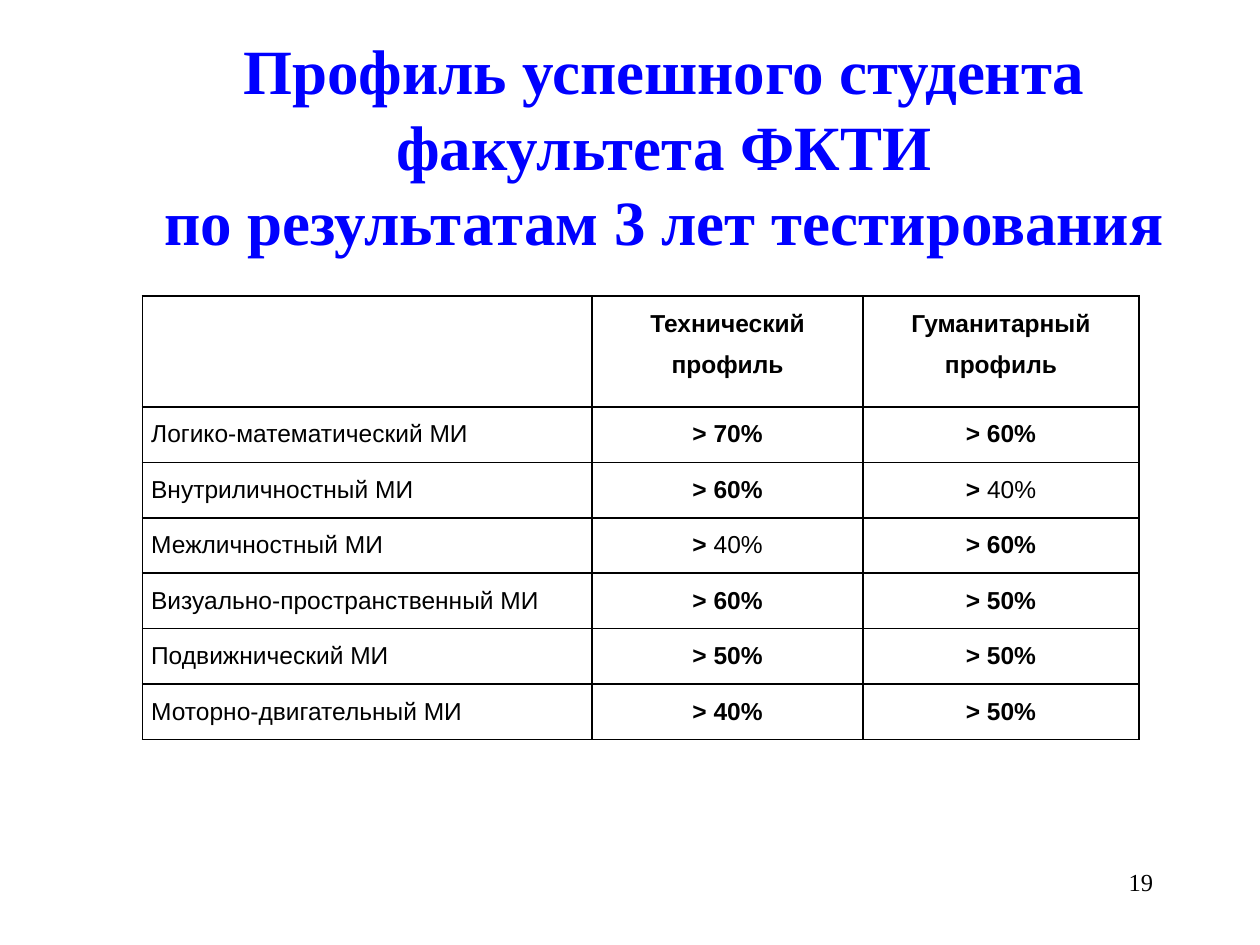
from lxml.etree import SubElement
from pptx import Presentation
from pptx.dml.color import RGBColor
from pptx.enum.text import MSO_ANCHOR, MSO_AUTO_SIZE, PP_ALIGN
from pptx.oxml.ns import qn
from pptx.util import Inches, Pt

COLORS = {"title": "0000FF", "text": "000000", "cell": "FFFFFF", "border": "000000"}
SERIF, SANS = "Times New Roman", "Arial"

TITLE = ["Профиль успешного студента факультета ФКТИ",
         "по результатам 3 лет тестирования"]
HEADER = ["", "Технический профиль", "Гуманитарный профиль"]
SCORES = [
    ("Логико-математический МИ", 70, 60),
    ("Внутриличностный МИ", 60, 40),
    ("Межличностный МИ", 40, 60),
    ("Визуально-пространственный МИ", 60, 50),
    ("Подвижнический МИ", 50, 50),
    ("Моторно-двигательный МИ", 40, 50),
]
LIGHT_CELLS = {(2, 2), (3, 1)}  # row, column of values in regular weight
COL_WIDTHS = [3.57, 2.15, 2.19]
ROW_HEIGHT = 0.44


def add_run(p, text, font, size, color="text", bold=False):
    r = p.add_run()
    r.text = text
    r.font.name, r.font.size, r.font.bold = font, Pt(size), bold
    r.font.color.rgb = RGBColor.from_string(COLORS[color])


def add_title(slide, left, top, width, height):
    s = slide.shapes.title
    s.left, s.top, s.width, s.height = map(Inches, (left, top, width, height))
    tf = s.text_frame
    tf.word_wrap = True
    tf.auto_size = MSO_AUTO_SIZE.NONE
    tf.vertical_anchor = MSO_ANCHOR.TOP
    for i, line in enumerate(TITLE):
        p = tf.add_paragraph() if i else tf.paragraphs[0]
        p.alignment = PP_ALIGN.CENTER
        add_run(p, line, SERIF, 36, "title", True)


def add_page_number(slide, left, top, width, height):
    box = slide.shapes.add_textbox(*map(Inches, (left, top, width, height)))
    tf = box.text_frame
    tf.word_wrap = True
    p = tf.paragraphs[0]
    p.alignment = PP_ALIGN.RIGHT
    add_run(p, "19", SERIF, 14)


def style_cell(cell):
    """Set margins, thin borders on all sides and a plain fill."""
    cell.margin_left = cell.margin_right = Inches(0.07)
    cell.margin_top = cell.margin_bottom = 0
    tcPr = cell._tc.get_or_add_tcPr()
    for side in ("a:lnL", "a:lnR", "a:lnT", "a:lnB"):
        ln = SubElement(tcPr, qn(side), w=str(Pt(1)))
        fill = SubElement(ln, qn("a:solidFill"))
        SubElement(fill, qn("a:srgbClr"), val=COLORS["border"])
    cell.fill.solid()
    cell.fill.fore_color.rgb = RGBColor.from_string(COLORS["cell"])


def cell_runs(row, col, value):
    """Return the (text, bold) runs of a cell."""
    if row == 0:
        return [(value, True)] if value else []
    if col == 0:
        return [(value, False)]
    if (row, col) in LIGHT_CELLS:
        return [("> ", True), (f"{value}%", False)]
    return [(f"> {value}%", True)]


def add_scores(slide, left, top):
    rows = [HEADER, *SCORES]
    heights = [2 * ROW_HEIGHT] + [ROW_HEIGHT] * len(SCORES)
    box = map(Inches, (left, top, sum(COL_WIDTHS), sum(heights)))
    table = slide.shapes.add_table(len(rows), len(COL_WIDTHS), *box).table
    for column, width in zip(table.columns, COL_WIDTHS):
        column.width = Inches(width)
    for i, (values, height) in enumerate(zip(rows, heights)):
        table.rows[i].height = Inches(height)
        for j, value in enumerate(values):
            cell = table.cell(i, j)
            style_cell(cell)
            p = cell.text_frame.paragraphs[0]
            p.line_spacing = 1.5
            p.alignment = PP_ALIGN.CENTER if j else PP_ALIGN.LEFT
            for text, bold in cell_runs(i, j, value):
                add_run(p, text, SANS, 14, bold=bold)


def main():
    prs = Presentation()
    prs.slide_width, prs.slide_height = Inches(10), Inches(7.5)
    slide = prs.slides.add_slide(prs.slide_layouts[5])
    add_title(slide, 0.75, 0.2, 9.04, 1.76)
    add_scores(slide, 1.13, 2.35)
    add_page_number(slide, 7.17, 6.83, 2.08, 0.5)
    prs.save("out.pptx")


if __name__ == "__main__":
    main()
